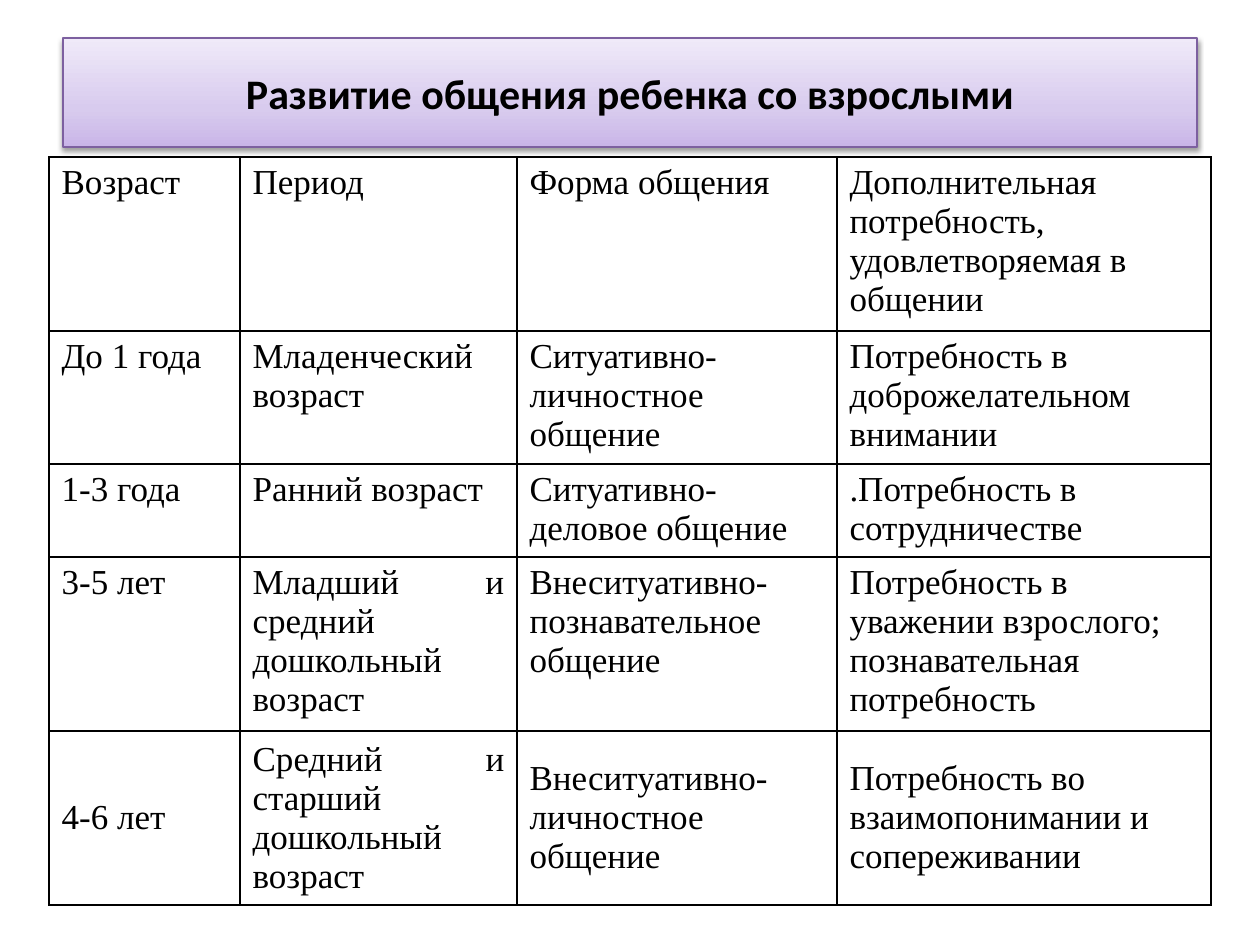
from pptx import Presentation
from pptx.dml.color import RGBColor
from pptx.enum.text import MSO_ANCHOR, PP_ALIGN
from pptx.oxml import parse_xml
from pptx.oxml.ns import nsdecls
from pptx.util import Emu, Pt

BLACK = RGBColor(0, 0, 0)
WHITE = RGBColor(255, 255, 255)
EDGE = RGBColor(0x7D, 0x60, 0xA0)
# Gradient stops: percent and colour, from bottom to top
LILAC = [(0, RGBColor(0xC9, 0xB5, 0xE8)),
         (35, RGBColor(0xD8, 0xCB, 0xEE)),
         (100, RGBColor(0xF0, 0xEA, 0xF9))]

TITLE = "Развитие общения ребенка со взрослыми"
ROWS = [
    ("Возраст", "Период", "Форма общения",
     "Дополнительная потребность, удовлетворяемая в общении"),
    ("До 1 года", "Младенческий возраст", "Ситуативно-личностное общение",
     "Потребность в доброжелательном внимании"),
    ("1-3 года", "Ранний возраст", "Ситуативно-деловое общение",
     ".Потребность в сотрудничестве"),
    ("3-5 лет", "Младший и средний дошкольный возраст",
     "Внеситуативно-познавательное общение",
     "Потребность в уважении взрослого; познавательная потребность"),
    ("4-6 лет", "Средний и старший дошкольный возраст",
     "Внеситуативно-личностное общение",
     "Потребность во взаимопонимании и сопереживании"),
]
WIDTHS = [191, 277, 320, 374]
HEIGHTS = [174, 133, 93, 174, 174]


def px(n):
    return Emu(round(n * 914400 / 126))


def write(frame, text, font="Times New Roman", size=20, bold=False,
          align=PP_ALIGN.LEFT):
    para = frame.paragraphs[0]
    para.alignment = align
    run = para.add_run()
    run.text = text
    run.font.name = font
    run.font.size = Pt(size)
    run.font.bold = bold
    run.font.color.rgb = BLACK


class Board:
    """Holds the current slide and the style of its parts."""

    def __init__(self, slide):
        self.slide = slide
        self.rule = Pt(1)

    def title(self, text, x, y, w, h):
        box = self.slide.shapes.title
        box.left, box.top, box.width, box.height = map(px, (x, y, w, h))
        box.text_frame.vertical_anchor = MSO_ANCHOR.MIDDLE
        write(box.text_frame, text, font="Calibri", size=24, bold=True,
              align=PP_ALIGN.CENTER)
        # Gradient, outline and shadow, in schema order
        stops = "".join(f'<a:gs pos="{pos * 1000}"><a:srgbClr val="{rgb}"/></a:gs>'
                        for pos, rgb in LILAC)
        props = box._element.spPr
        props.append(parse_xml(
            f'<a:gradFill {nsdecls("a")} rotWithShape="1"><a:gsLst>{stops}</a:gsLst>'
            '<a:lin ang="16200000" scaled="0"/></a:gradFill>'))
        box.line.color.rgb = EDGE
        box.line.width = Pt(0.75)
        props.append(parse_xml(
            f'<a:effectLst {nsdecls("a")}><a:outerShdw blurRad="{Pt(3.1)}" '
            f'dist="{Pt(1.6)}" dir="5400000" rotWithShape="0"><a:srgbClr val="{BLACK}">'
            '<a:alpha val="38000"/></a:srgbClr></a:outerShdw></a:effectLst>'))

    def table(self, rows, x, y, widths, heights):
        grid = self.slide.shapes.add_table(
            len(rows), len(widths), px(x), px(y),
            px(sum(widths)), px(sum(heights))).table
        grid.first_row = grid.horz_banding = False
        for col, w in zip(grid.columns, widths):
            col.width = px(w)
        for row, h in zip(grid.rows, heights):
            row.height = px(h)
        for r, texts in enumerate(rows):
            for c, text in enumerate(texts):
                cell = grid.cell(r, c)
                # Last column is ragged, last row is centred vertically
                last = c == len(widths) - 1
                write(cell.text_frame, text,
                      align=PP_ALIGN.LEFT if last else PP_ALIGN.JUSTIFY)
                cell.vertical_anchor = (MSO_ANCHOR.MIDDLE if r == len(rows) - 1
                                        else MSO_ANCHOR.TOP)
                self.border(cell)
                cell.fill.solid()
                cell.fill.fore_color.rgb = WHITE

    def border(self, cell):
        props = cell._tc.get_or_add_tcPr()
        for side in "LRTB":
            props.append(parse_xml(
                f'<a:ln{side} {nsdecls("a")} w="{self.rule}"><a:solidFill>'
                f'<a:srgbClr val="{BLACK}"/></a:solidFill></a:ln{side}>'))


def main():
    deck = Presentation()
    deck.slide_width, deck.slide_height = px(1260), px(945)
    board = Board(deck.slides.add_slide(deck.slide_layouts[5]))
    board.title(TITLE, 63, 38, 1134, 109)
    board.table(ROWS, 49, 157, WIDTHS, HEIGHTS)
    deck.save("out.pptx")


if __name__ == "__main__":
    main()
